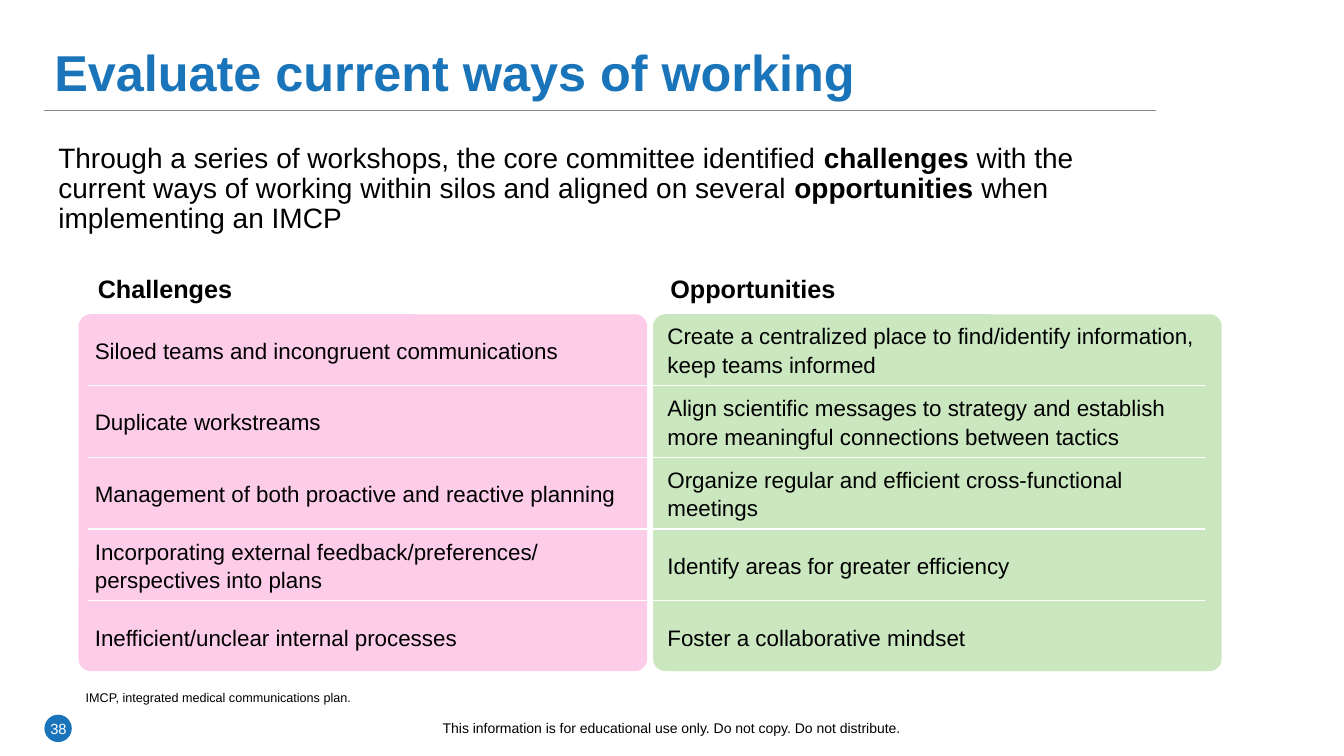
from lxml import etree
from pptx import Presentation
from pptx.dml.color import RGBColor
from pptx.enum.shapes import MSO_CONNECTOR, MSO_SHAPE
from pptx.enum.text import MSO_ANCHOR, PP_ALIGN
from pptx.oxml.ns import qn
from pptx.util import Cm, Pt

ELLIPSE = MSO_SHAPE.OVAL
ROUNDED = MSO_SHAPE.ROUNDED_RECTANGLE
STRAIGHT = MSO_CONNECTOR.STRAIGHT
TOP, MIDDLE, BOTTOM = MSO_ANCHOR.TOP, MSO_ANCHOR.MIDDLE, MSO_ANCHOR.BOTTOM
LEFT, CENTER = PP_ALIGN.LEFT, PP_ALIGN.CENTER

BLUE = RGBColor(0x1A, 0x74, 0xBA)
GRAY = RGBColor(0x8A, 0x8A, 0x8A)
GREEN = RGBColor(0xCA, 0xE7, 0xC0)
PINK = RGBColor(0xFD, 0xCC, 0xE8)
BLACK = RGBColor(0, 0, 0)
WHITE = RGBColor(0xFF, 0xFF, 0xFF)

INTRODUCTION = [
    ("Through a series of workshops, the core committee identified ", False),
    ("challenges", True),
    (" with the current ways of working within silos and aligned on several ", False),
    ("opportunities", True),
    (" when implementing an IMCP", False),
]
HEADINGS = ("Challenges", "Opportunities")
FINDINGS = [
    ("Siloed teams and incongruent communications",
     "Create a centralized place to find/identify information, keep teams informed"),
    ("Duplicate workstreams",
     "Align scientific messages to strategy and establish more meaningful connections between tactics"),
    ("Management of both proactive and reactive planning",
     "Organize regular and efficient cross-functional meetings"),
    ("Incorporating external feedback/preferences/ perspectives into plans",
     "Identify areas for greater efficiency"),
    ("Inefficient/unclear internal processes",
     "Foster a collaborative mindset"),
]


def write_text(frame, runs, size, color=BLACK, bold=False, align=LEFT, spacing=1.0):
    paragraph = frame.paragraphs[0]
    paragraph.alignment = align
    paragraph.line_spacing = spacing
    if isinstance(runs, str):
        runs = [(runs, bold)]
    for text, run_bold in runs:
        run = paragraph.add_run()
        run.text = text
        run.font.name = "Arial"
        run.font.size = Pt(size)
        run.font.bold = run_bold
        run.font.color.rgb = color


def add_text(slide, position, runs, size, anchor=TOP, **text_format):
    frame = slide.shapes.add_textbox(*map(Cm, position)).text_frame
    frame.word_wrap = True
    frame.vertical_anchor = anchor
    write_text(frame, runs, size, **text_format)


def add_panel(slide, kind, position, color):
    shape = slide.shapes.add_shape(kind, *map(Cm, position))
    shape.shadow.inherit = False
    shape.fill.solid()
    shape.fill.fore_color.rgb = color
    shape.line.fill.background()
    return shape


def add_rule(slide, left, right, top):
    rule = slide.shapes.add_connector(STRAIGHT, Cm(left), Cm(top), Cm(right), Cm(top))
    rule.line.color.rgb = GRAY
    rule.line.width = Pt(0.5)
    etree.SubElement(rule._element.spPr, qn("a:effectLst"))


def set_borders(cell):
    properties = cell._tc.get_or_add_tcPr()
    for side in ("lnL", "lnR"):
        border = etree.SubElement(properties, qn(f"a:{side}"))
        etree.SubElement(border, qn("a:noFill"))
    for side in ("lnT", "lnB"):
        border = etree.SubElement(properties, qn(f"a:{side}"), w=str(Pt(1)))
        fill = etree.SubElement(border, qn("a:solidFill"))
        etree.SubElement(fill, qn("a:srgbClr"), val=str(WHITE))


def add_findings_table(slide):
    rows = [HEADINGS, *FINDINGS]
    position = map(Cm, (2.21, 6.81, 28.15, 10.09))
    table = slide.shapes.add_table(len(rows), len(HEADINGS), *position).table
    table.first_row = False
    table.horz_banding = False
    for column, width in zip(table.columns, (14.43, 13.72)):
        column.width = Cm(width)
    for row_index, texts in enumerate(rows):
        heading = row_index == 0
        table.rows[row_index].height = Cm(1.09 if heading else 1.81)
        for column_index, text in enumerate(texts):
            cell = table.cell(row_index, column_index)
            set_borders(cell)
            cell.fill.background()
            if heading:
                write_text(cell.text_frame, text, 18, bold=True)
            else:
                cell.vertical_anchor = MIDDLE
                cell.margin_left = cell.margin_right = Cm(0.18)
                cell.margin_top = cell.margin_bottom = Cm(0)
                write_text(cell.text_frame, text, 16, spacing=1.15)


def main():
    presentation = Presentation()
    presentation.slide_width = Cm(33.87)
    presentation.slide_height = Cm(19.05)
    slide = presentation.slides.add_slide(presentation.slide_layouts[6])

    add_panel(slide, ELLIPSE, (1.12, 18.01, 0.69, 0.69), BLUE)
    add_rule(slide, 1.12, 29.13, 2.77)
    for left, color in ((16.46, GREEN), (1.98, PINK)):
        panel = add_panel(slide, ROUNDED, (left, 7.92, 14.33, 8.99), color)
        panel.adjustments[0] = 0.034

    add_text(slide, (1.12, 0.53, 30.91, 2.72), "Evaluate current ways of working", 36,
             anchor=MIDDLE, color=BLUE, bold=True, spacing=0.9)
    add_findings_table(slide)
    add_text(slide, (0.74, 18.01, 1.47, 1.02), "38", 10.5, color=WHITE, align=CENTER)
    add_text(slide, (0.97, 18.01, 31.9, 1.02),
             "This information is for educational use only. Do not copy. Do not distribute.",
             10, align=CENTER)
    add_text(slide, (1.22, 3.51, 27.51, 3.38), INTRODUCTION, 20, spacing=0.9)
    add_text(slide, (1.91, 17.25, 28.58, 0.64),
             "IMCP, integrated medical communications plan.", 9, anchor=BOTTOM)
    presentation.save("out.pptx")


if __name__ == "__main__":
    main()
